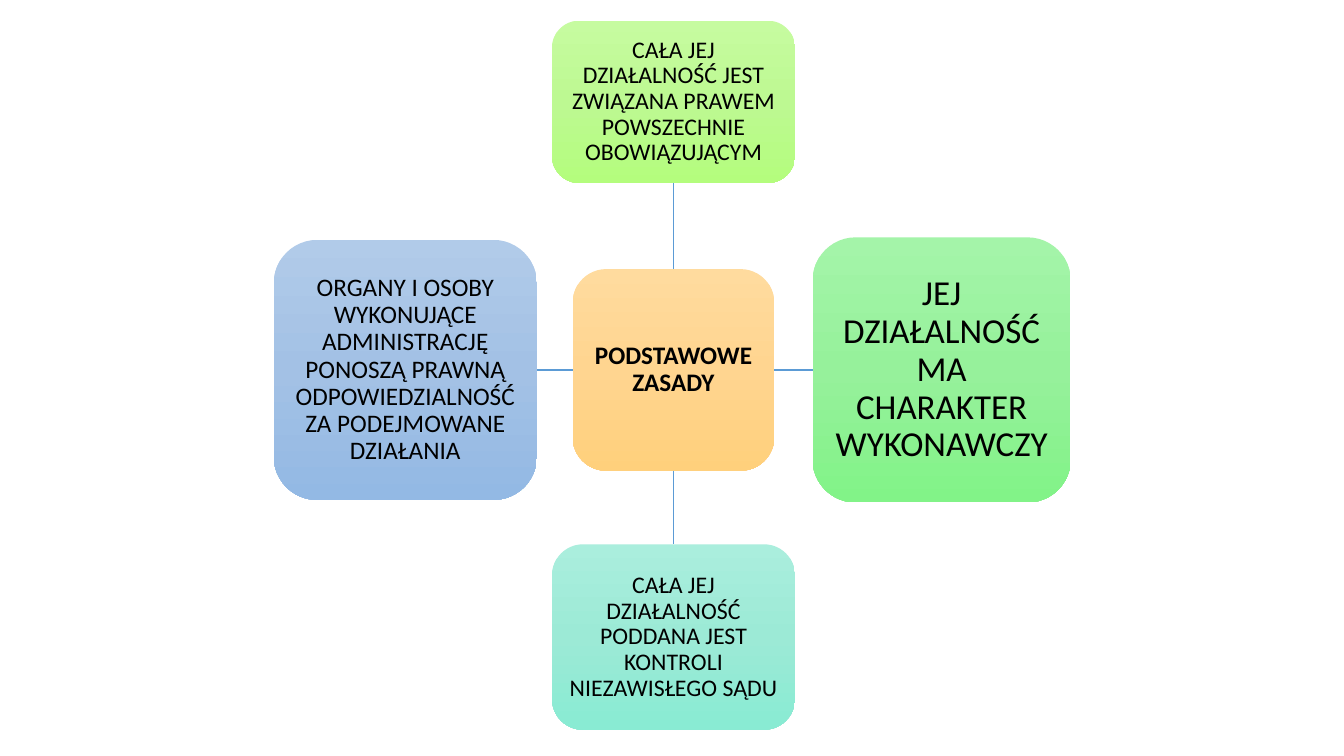
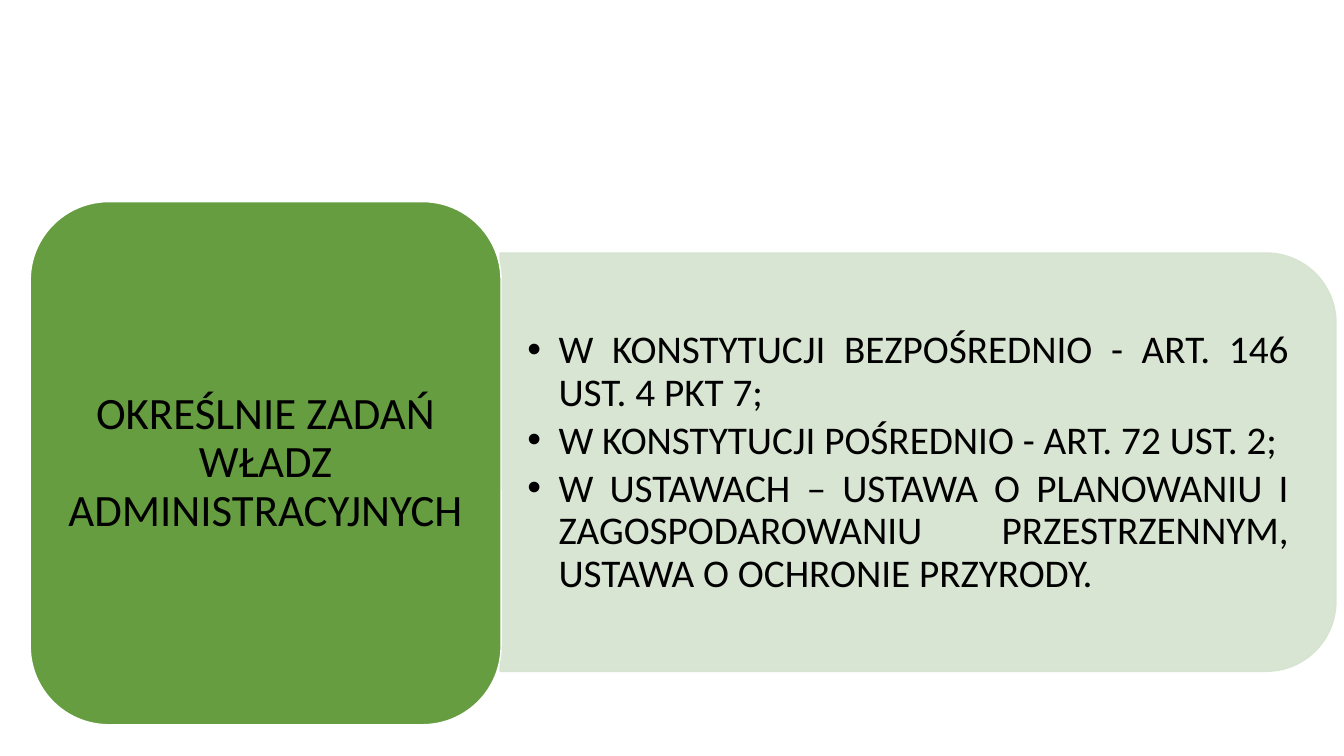
from copy import deepcopy

from lxml.etree import SubElement
from pptx import Presentation
from pptx.dml.color import RGBColor
from pptx.enum.shapes import MSO_CONNECTOR, MSO_SHAPE
from pptx.enum.text import MSO_ANCHOR, MSO_AUTO_SIZE, PP_ALIGN
from pptx.oxml.ns import qn
from pptx.util import Inches, Pt

FONT = "Calibri"
BLACK = RGBColor(0x00, 0x00, 0x00)
WHITE = RGBColor(0xFF, 0xFF, 0xFF)
LINK_BLUE = RGBColor(0x5B, 0x9B, 0xD5)
TASK_GREEN = RGBColor(0x66, 0x9D, 0x40)
PANEL_GREEN = RGBColor(0xD5, 0xE3, 0xCF)
PANEL_OPACITY = 90

TOP, LEFT, BOTTOM, RIGHT = range(4)  # connection sites of a rounded rectangle
OPPOSITE = {TOP: BOTTOM, BOTTOM: TOP, LEFT: RIGHT, RIGHT: LEFT}
HUB_X, HUB_Y = 6.68, 3.67

HUB = {"text": "PODSTAWOWE ZASADY", "center": (HUB_X, HUB_Y), "size": (2, 2),
       "points": 18, "inset": 0.05, "colors": ("FFDB9E", "FFD590", "FFD07C")}
PRINCIPLES = {
    TOP: {"text": "CAŁA JEJ DZIAŁALNOŚĆ JEST ZWIĄZANA PRAWEM POWSZECHNIE OBOWIĄZUJĄCYM",
          "center": (HUB_X, 1.01), "size": (2.41, 1.61),
          "points": 17, "inset": 0.05, "colors": ("C6FBA0", "BDF992", "B4FD7D")},
    RIGHT: {"text": "JEJ DZIAŁALNOŚĆ MA CHARAKTER WYKONAWCZY",
            "center": (9.34, HUB_Y), "size": (2.56, 2.63),
            "points": 25, "inset": 0.07, "colors": ("A4F4A9", "96F19B", "82F388")},
    BOTTOM: {"text": "CAŁA JEJ DZIAŁALNOŚĆ PODDANA JEST KONTROLI NIEZAWISŁEGO SĄDU",
             "center": (HUB_X, 6.32), "size": (2.41, 1.84),
             "points": 17, "inset": 0.05, "colors": ("AAEEDD", "9CEAD6", "89EBD3")},
    LEFT: {"text": "ORGANY I OSOBY WYKONUJĄCE ADMINISTRACJĘ PONOSZĄ PRAWNĄ "
                   "ODPOWIEDZIALNOŚĆ ZA PODEJMOWANE DZIAŁANIA",
           "center": (4.02, HUB_Y), "size": (2.61, 2.58),
           "points": 18, "inset": 0.05, "colors": ("B1CBE9", "A3C1E5", "93B9E4")},
}
TASK = "OKREŚLNIE ZADAŃ WŁADZ ADMINISTRACYJNYCH"
SOURCES = [
    "W KONSTYTUCJI BEZPOŚREDNIO - ART. 146 UST. 4 PKT 7;",
    "W KONSTYTUCJI POŚREDNIO - ART. 72 UST. 2;",
    "W USTAWACH – USTAWA O PLANOWANIU I ZAGOSPODAROWANIU PRZESTRZENNYM, "
    "USTAWA O OCHRONIE PRZYRODY.",
]


def write(shape, lines, points, inset_x, inset_y, align, bold=False):
    frame = shape.text_frame
    frame.text = "\n".join(lines)
    frame.word_wrap = True
    frame.auto_size = MSO_AUTO_SIZE.NONE
    frame.vertical_anchor = MSO_ANCHOR.MIDDLE
    frame.margin_left = frame.margin_right = Inches(inset_x)
    frame.margin_top = frame.margin_bottom = Inches(inset_y)
    for para in frame.paragraphs:
        para.alignment = align
        para.line_spacing = 0.9
        para.space_before = Pt(0)
        para.space_after = Pt(0)
        for span in para.runs:
            span.font.name = FONT
            span.font.size = Pt(points)
            span.font.bold = bold
            span.font.color.rgb = BLACK


def add_box(page, kind, left, top, width, height):
    box = page.shapes.add_shape(kind, Inches(left), Inches(top),
                                Inches(width), Inches(height))
    box.shadow.inherit = False
    return box


def fill_gradient(box, colors):
    """Fill from top to bottom with three evenly spaced colours."""
    box.fill.gradient()
    box.fill.gradient_angle = 270
    stop_list = box.element.find(".//" + qn("a:gsLst"))
    stop_list.insert(1, deepcopy(stop_list[0]))
    for index, (stop, color) in enumerate(zip(box.fill.gradient_stops, colors)):
        stop.position = index / 2
        stop.color.rgb = RGBColor.from_string(color)


def add_principle(page, item, bold=False):
    (x, y), (width, height) = item["center"], item["size"]
    box = add_box(page, MSO_SHAPE.ROUNDED_RECTANGLE,
                  x - width / 2, y - height / 2, width, height)
    fill_gradient(box, item["colors"])
    box.line.fill.background()
    write(box, [item["text"]], item["points"], item["inset"], item["inset"],
          PP_ALIGN.CENTER, bold)
    return box


def link(page, hub, box, side):
    line = page.shapes.add_connector(MSO_CONNECTOR.STRAIGHT, 0, 0, 0, 0)
    line.begin_connect(hub, side)
    line.end_connect(box, OPPOSITE[side])
    line.line.color.rgb = LINK_BLUE
    line.line.width = Pt(1)
    SubElement(line.element.spPr, qn("a:effectLst"))


def set_bullet(para, indent):
    properties = para._p.get_or_add_pPr()
    properties.set("marL", str(Inches(indent)))
    properties.set("indent", str(-Inches(indent)))
    SubElement(properties, qn("a:buChar")).set("char", "•")


def build_principles(deck):
    page = deck.slides.add_slide(deck.slide_layouts[6])
    hub = add_principle(page, HUB, bold=True)
    for side, item in PRINCIPLES.items():
        link(page, hub, add_principle(page, item), side)


def build_tasks(deck):
    page = deck.slides.add_slide(deck.slide_layouts[1])
    title, body = page.placeholders
    title.element.getparent().remove(title.element)

    panel = add_box(page, MSO_SHAPE.ROUND_2_SAME_RECTANGLE, 7.03, 0.44, 4.15, 8.29)
    panel.rotation = 90
    panel.fill.solid()
    panel.fill.fore_color.rgb = PANEL_GREEN
    panel.line.color.rgb = PANEL_GREEN
    panel.line.width = Pt(1)
    for color in panel.element.spPr.iter(qn("a:srgbClr")):
        SubElement(color, qn("a:alpha")).set("val", str(PANEL_OPACITY * 1000))

    panel.element.addnext(body.element)  # the list lies on the panel
    body.left, body.top = Inches(4.96), Inches(2.72)
    body.width, body.height = Inches(8.09), Inches(3.74)
    write(body, SOURCES, 28, 0.27, 0.14, PP_ALIGN.JUSTIFY)
    for para in body.text_frame.paragraphs:
        para.space_after = Pt(4.2)
        set_bullet(para, 0.31)

    task = add_box(page, MSO_SHAPE.ROUNDED_RECTANGLE, 0.3, 2, 4.67, 5.19)
    task.fill.solid()
    task.fill.fore_color.rgb = TASK_GREEN
    task.line.color.rgb = WHITE
    task.line.width = Pt(1)
    write(task, [TASK], 32, 0.13, 0.07, PP_ALIGN.CENTER)


def main():
    deck = Presentation()
    deck.slide_width, deck.slide_height = Inches(13.33), Inches(7.5)
    build_principles(deck)
    build_tasks(deck)
    deck.save("out.pptx")


if __name__ == "__main__":
    main()
